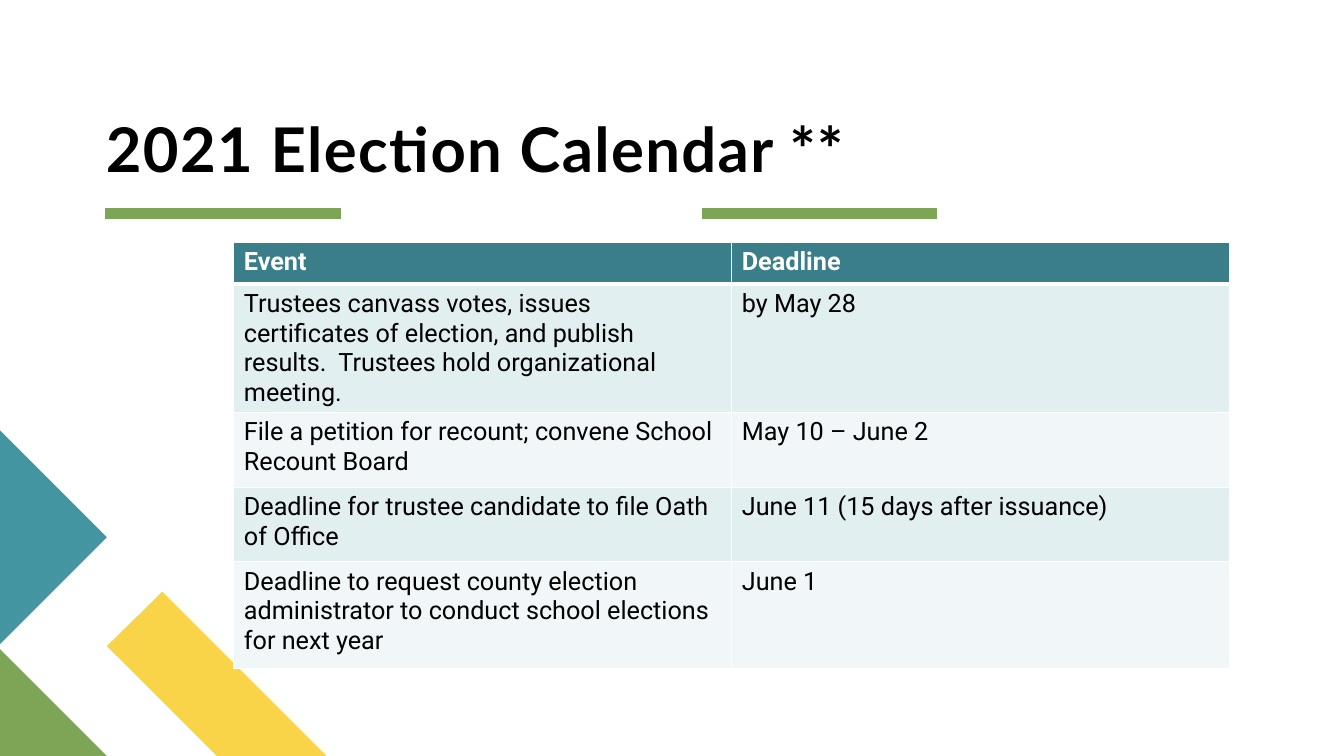
from dataclasses import dataclass

from lxml.etree import SubElement
from pptx import Presentation
from pptx.dml.color import RGBColor
from pptx.enum.shapes import MSO_CONNECTOR
from pptx.enum.text import MSO_ANCHOR, MSO_AUTO_SIZE, PP_ALIGN
from pptx.oxml.ns import qn
from pptx.util import Inches, Pt


@dataclass(frozen=True)
class Theme:
    teal: str = "4495A2"
    green: str = "7CA655"
    yellow: str = "F9D448"
    header: str = "397E89"
    bands: tuple[str, str] = ("E2EFF1", "F1F7F8")
    ink: str = "000000"
    paper: str = "FFFFFF"
    title_font: str = "Lato"
    body_font: str = "Roboto"
    title_size: int = 44
    body_size: int = 18
    rule_width: int = 8
    border_width: int = 1
    header_border_width: int = 3


@dataclass(frozen=True)
class Polygon:
    color: str
    points: tuple[tuple[float, float], ...]


@dataclass(frozen=True)
class Rule:
    start: float
    end: float


@dataclass(frozen=True)
class Event:
    name: str
    deadline: str
    height: float


THEME = Theme()
WIDTH, HEIGHT = Inches(13.33), Inches(7.5)

# All positions are percentages of the slide's width and height
POLYGONS = (
    Polygon(THEME.yellow, ((24.3, 100), (16.13, 100), (7.95, 85.47), (12.08, 78.27))),
    Polygon(THEME.green, ((7.95, 100), (0, 100), (0, 85.87))),
    Polygon(THEME.teal, ((0, 56.93), (7.95, 71.07), (0, 85.2))),
)
RULES = (Rule(7.8, 25.35), Rule(52.2, 69.7))
RULE_TOP = 28.27
EVENTS = (
    Event("Event", "Deadline", 5.6),
    Event("Trustees canvass votes, issues certificates of election, and publish "
          "results.  Trustees hold organizational meeting.", "by May 28", 14.13),
    Event("File a petition for recount; convene School Recount Board",
          "May 10 – June 2", 9.87),
    Event("Deadline for trustee candidate to file Oath of Office",
          "June 11 (15 days after issuance)", 9.87),
    Event("Deadline to request county election administrator to conduct "
          "school elections for next year", "June 1", 14.13),
)


def across(share: float) -> int:
    return round(WIDTH * share / 100)


def down(share: float) -> int:
    return round(HEIGHT * share / 100)


def write_text(frame, text: str, *, font: str, size: int, color: str,
               bold: bool = False, tracking: float = 0, line_spacing: float = 1) -> None:
    para = frame.paragraphs[0]
    para.alignment = PP_ALIGN.LEFT
    para.line_spacing = line_spacing
    span = para.add_run()
    span.text = text
    span.font.name = font
    span.font.size = Pt(size)
    span.font.bold = bold
    span.font.color.rgb = RGBColor.from_string(color)
    if tracking:
        span.font._element.set("spc", str(round(tracking * 100)))


def draw_polygon(page, polygon: Polygon) -> None:
    first, *rest = [(across(x), down(y)) for x, y in polygon.points]
    builder = page.shapes.build_freeform(*first, scale=1.0)
    builder.add_line_segments(rest, close=True)
    shape = builder.convert_to_shape()
    shape.shadow.inherit = False
    shape.fill.solid()
    shape.fill.fore_color.rgb = RGBColor.from_string(polygon.color)
    shape.line.fill.background()


def draw_rule(page, rule: Rule) -> None:
    line = page.shapes.add_connector(
        MSO_CONNECTOR.STRAIGHT, across(rule.start), down(RULE_TOP),
        across(rule.end), down(RULE_TOP))
    line.line.color.rgb = RGBColor.from_string(THEME.green)
    line.line.width = Pt(THEME.rule_width)
    SubElement(line._element.spPr, qn("a:effectLst"))


def set_border(cell, side: str, width: int) -> None:
    properties = cell._tc.get_or_add_tcPr()
    border = SubElement(properties, qn(f"a:ln{side}"), w=str(Pt(width)))
    fill = SubElement(border, qn("a:solidFill"))
    SubElement(fill, qn("a:srgbClr"), val=THEME.paper)


def format_cell(cell, text: str, row: int) -> None:
    is_header = row == 0
    heavy_side = {0: "B", 1: "T"}.get(row)
    for side in "LRTB":
        set_border(cell, side, THEME.header_border_width if side == heavy_side
                   else THEME.border_width)
    cell.fill.solid()
    color = THEME.header if is_header else THEME.bands[(row - 1) % 2]
    cell.fill.fore_color.rgb = RGBColor.from_string(color)
    write_text(cell.text_frame, text, font=THEME.body_font, size=THEME.body_size,
               color=THEME.paper if is_header else THEME.ink, bold=is_header)


def draw_title(page, text: str) -> None:
    title = page.shapes.title
    title.left, title.top = across(7.88), down(12.8)
    title.width, title.height = across(65), down(11.73)
    frame = title.text_frame
    frame.margin_left = frame.margin_right = frame.margin_top = frame.margin_bottom = 0
    frame.word_wrap = True
    frame.auto_size = MSO_AUTO_SIZE.NONE
    frame.vertical_anchor = MSO_ANCHOR.BOTTOM
    write_text(frame, text, font=THEME.title_font, size=THEME.title_size,
               color=THEME.ink, bold=True, tracking=1, line_spacing=0.9)


def draw_calendar(page, events: tuple[Event, ...]) -> None:
    total = sum(event.height for event in events)
    table = page.shapes.add_table(len(events), 2, across(17.4), down(32),
                                  across(74.1), down(total)).table
    for row, event in enumerate(events):
        table.rows[row].height = down(event.height)
        for column, text in enumerate((event.name, event.deadline)):
            format_cell(table.cell(row, column), text, row)


def main() -> None:
    deck = Presentation()
    deck.slide_width, deck.slide_height = WIDTH, HEIGHT
    page = deck.slides.add_slide(deck.slide_layouts[5])

    # Corner decoration and title underlines
    for polygon in POLYGONS:
        draw_polygon(page, polygon)
    for rule in RULES:
        draw_rule(page, rule)

    # Title and calendar
    draw_title(page, "2021 Election Calendar **")
    draw_calendar(page, EVENTS)

    deck.save("out.pptx")


if __name__ == "__main__":
    main()
